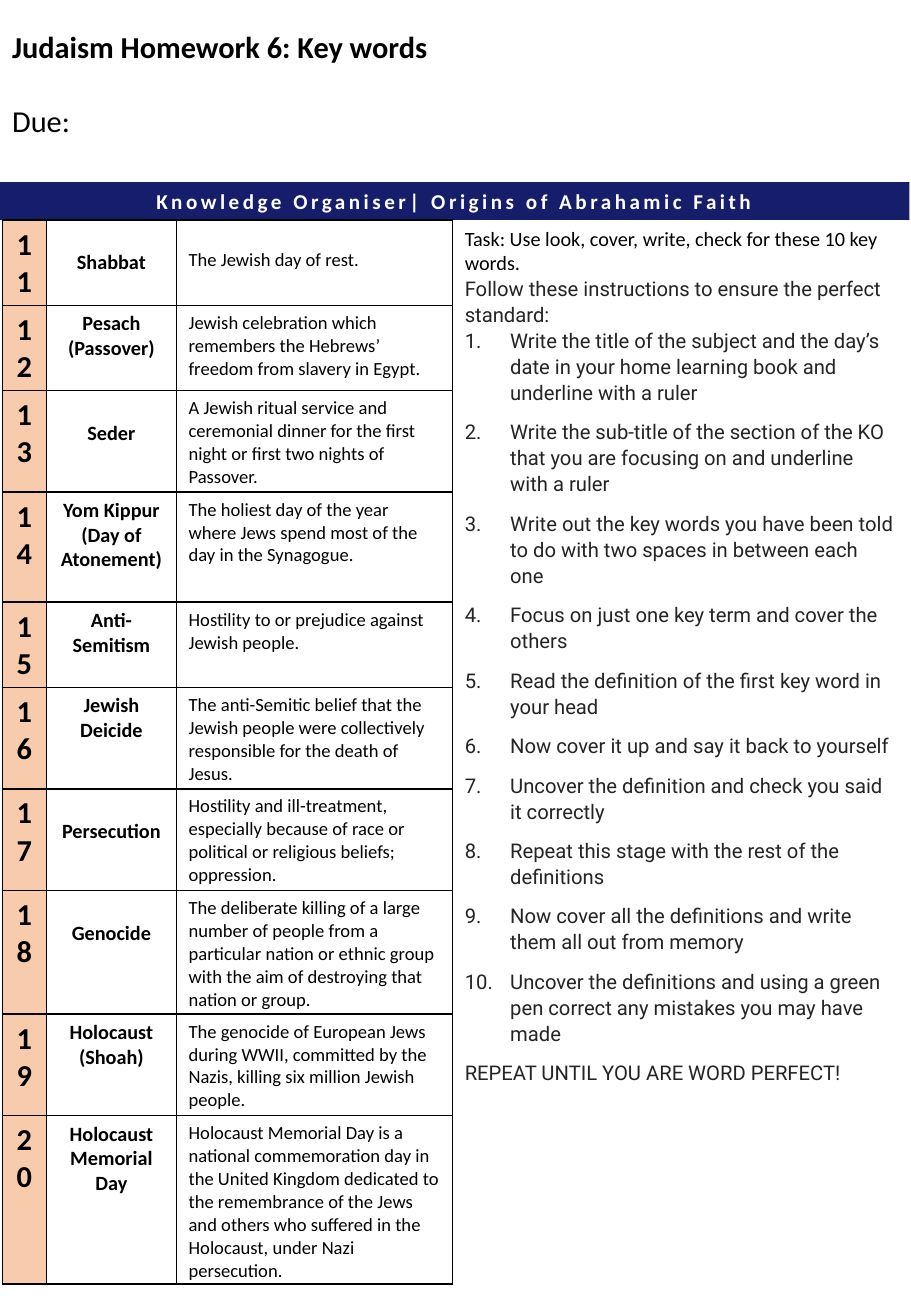
from lxml import etree
from pptx import Presentation
from pptx.dml.color import RGBColor
from pptx.enum.shapes import MSO_SHAPE
from pptx.enum.text import MSO_ANCHOR, MSO_AUTO_SIZE, PP_ALIGN
from pptx.oxml.ns import qn
from pptx.util import Cm, Pt

RECTANGLE = MSO_SHAPE.RECTANGLE
TOP, MIDDLE = MSO_ANCHOR.TOP, MSO_ANCHOR.MIDDLE
LEFT, CENTER = PP_ALIGN.LEFT, PP_ALIGN.CENTER
GROW = MSO_AUTO_SIZE.SHAPE_TO_FIT_TEXT
TITLE_ONLY = 5

NAVY, PEACH, WHITE, BLACK, CHARCOAL = "161E6B", "F8CBAD", "FFFFFF", "000000", "252424"

HEADING = dict(size=Pt(18), name="Calibri", bold=True)
DUE = dict(HEADING, bold=False)
BANNER = dict(size=Pt(12.5), name="Calibri", bold=True)
TERM = dict(size=Pt(12), name="Calibri", bold=True)
DEFINITION = dict(size=Pt(11), name="Calibri", bold=False)
TASK = dict(size=Pt(12), name="Calibri", bold=False)
INSTRUCTION = dict(TASK, name="Roboto")

FIRST_NUMBER = 11
COLUMN_WIDTHS = (0.92, 2.72, 5.77)
CELL_TOP = 0.13
LINE_DROP = {"term": 0.51, "definition": 0.47}

# Term, definition, row height in cm, cells that start one line lower
KEY_WORDS = [
    ("Shabbat", "The Jewish day of rest.", 1.78, ("term", "definition")),
    ("Pesach (Passover)",
     "Jewish celebration which remembers the Hebrews’ freedom from slavery in Egypt.",
     1.78, ()),
    ("Seder",
     "A Jewish ritual service and ceremonial dinner for the first night or first two "
     "nights of Passover.", 2.1, ("term",)),
    ("Yom Kippur (Day of Atonement)",
     "The holiest day of the year where Jews spend most of the day in the Synagogue.",
     2.3, ()),
    ("Anti-Semitism", "Hostility to or prejudice against Jewish people.", 1.78, ()),
    ("Jewish Deicide",
     "The anti-Semitic belief that the Jewish people were collectively responsible for "
     "the death of Jesus.", 2.12, ()),
    ("Persecution",
     "Hostility and ill-treatment, especially because of race or political or religious "
     "beliefs; oppression.", 2.12, ("term",)),
    ("Genocide",
     "The deliberate killing of a large number of people from a particular nation or "
     "ethnic group with the aim of destroying that nation or group.", 2.57, ("term",)),
    ("Holocaust\n(Shoah)",
     "The genocide of European Jews during WWII, committed by the Nazis, killing six "
     "million Jewish people.", 2.12, ()),
    ("Holocaust Memorial Day",
     "Holocaust Memorial Day is a national commemoration day in the United Kingdom "
     "dedicated to the remembrance of the Jews and others who suffered in the Holocaust, "
     "under Nazi persecution.", 3.5, ()),
]

STEPS = [
    "Write the title of the subject and the day’s date in your home learning book and "
    "underline with a ruler",
    "Write the sub-title of the section of the KO that you are focusing on and underline "
    "with a ruler",
    "Write out the key words you have been told to do with two spaces in between each one",
    "Focus on just one key term and cover the others",
    "Read the definition of the first key word in your head",
    "Now cover it up and say it back to yourself",
    "Uncover the definition and check you said it correctly",
    "Repeat this stage with the rest of the definitions",
    "Now cover all the definitions and write them all out from memory",
    "Uncover the definitions and using a green pen correct any mistakes you may have made",
]


def rgb(hex_color):
    return RGBColor.from_string(hex_color)


def set_attributes(target, values):
    for attribute, value in values.items():
        setattr(target, attribute, value)


def write(paragraph, text, font, color=BLACK, **layout):
    paragraph.text = text
    set_attributes(paragraph, layout)
    for run in paragraph.runs:
        set_attributes(run.font, font)
        run.font.color.rgb = rgb(color)


def number_paragraph(paragraph):
    properties = paragraph._p.get_or_add_pPr()
    properties.set("marL", str(Cm(0.95)))
    properties.set("indent", str(-Cm(0.95)))
    etree.SubElement(properties, qn("a:buFont"), typeface="+mj-lt")
    etree.SubElement(properties, qn("a:buAutoNum"), type="arabicPeriod")


def outline_cell(cell):
    """Draw a thin black line on all four sides."""
    properties = cell._tc.get_or_add_tcPr()
    for position, side in enumerate(("lnL", "lnR", "lnT", "lnB")):
        border = etree.Element(qn(f"a:{side}"), w=str(Pt(1)))
        fill = etree.SubElement(border, qn("a:solidFill"))
        etree.SubElement(fill, qn("a:srgbClr"), val=BLACK)
        properties.insert(position, border)


def add_heading(slide, left, top, width, height):
    title = slide.shapes.title
    set_attributes(title, dict(left=left, top=top, width=width, height=height))
    frame = title.text_frame
    set_attributes(frame, dict(word_wrap=True, auto_size=GROW, vertical_anchor=TOP))
    write(frame.paragraphs[0], "Judaism Homework 6: Key words", HEADING, alignment=LEFT)
    write(frame.add_paragraph(), "Due:", DUE, alignment=LEFT, space_before=Pt(22))


def add_banner(slide, left, top, width, height):
    banner = slide.shapes.add_shape(RECTANGLE, left, top, width, height)
    banner.shadow.inherit = False
    banner.fill.solid()
    banner.fill.fore_color.rgb = rgb(NAVY)
    banner.line.fill.background()
    banner.text_frame.vertical_anchor = MIDDLE
    caption = banner.text_frame.paragraphs[0]
    write(caption, "Knowledge Organiser| Origins of Abrahamic Faith", BANNER, WHITE,
          alignment=CENTER)
    caption.runs[0].font._element.set("spc", "210")


def add_key_words(slide, left, top, width, height):
    table = slide.shapes.add_table(len(KEY_WORDS), len(COLUMN_WIDTHS),
                                   left, top, width, height).table
    set_attributes(table, dict(first_row=False, horz_banding=False))
    for column, column_width in zip(table.columns, COLUMN_WIDTHS):
        column.width = Cm(column_width)
    for index, (term, definition, row_height, lowered) in enumerate(KEY_WORDS):
        row = table.rows[index]
        row.height = Cm(row_height)
        contents = (
            ("number", str(FIRST_NUMBER + index), HEADING, CENTER, PEACH),
            ("term", term, TERM, CENTER, WHITE),
            ("definition", definition, DEFINITION, LEFT, WHITE),
        )
        for cell, (role, text, font, alignment, background) in zip(row.cells, contents):
            drop = LINE_DROP[role] if role in lowered else 0
            set_attributes(cell, dict(margin_top=Cm(CELL_TOP + drop), vertical_anchor=TOP))
            cell.fill.solid()
            cell.fill.fore_color.rgb = rgb(background)
            outline_cell(cell)
            write(cell.text_frame.paragraphs[0], text, font, alignment=alignment)


def add_instructions(slide, left, top, width, height):
    frame = slide.shapes.add_textbox(left, top, width, height).text_frame
    set_attributes(frame, dict(word_wrap=True, auto_size=GROW))
    write(frame.paragraphs[0],
          "Task: Use look, cover, write, check for these 10 key words.", TASK)
    write(frame.add_paragraph(),
          "Follow these instructions to ensure the perfect standard:",
          INSTRUCTION, CHARCOAL, line_spacing=1.07)
    for step in STEPS:
        paragraph = frame.add_paragraph()
        write(paragraph, step, INSTRUCTION, CHARCOAL, line_spacing=1.07, space_after=Pt(8))
        number_paragraph(paragraph)
    write(frame.add_paragraph(), "REPEAT UNTIL YOU ARE WORD PERFECT!",
          INSTRUCTION, CHARCOAL, line_spacing=1.07)


def main():
    presentation = Presentation()
    set_attributes(presentation, dict(slide_width=Cm(19.05), slide_height=Cm(27.51)))
    slide = presentation.slides.add_slide(presentation.slide_layouts[TITLE_ONLY])
    add_heading(slide, Cm(0), Cm(0.46), Cm(15.52), Cm(2.57))
    add_banner(slide, Cm(-0.03), Cm(3.81), Cm(19.05), Cm(0.79))
    add_key_words(slide, Cm(0.05), Cm(4.6), Cm(sum(COLUMN_WIDTHS)),
                  Cm(sum(row_height for _, _, row_height, _ in KEY_WORDS)))
    add_instructions(slide, Cm(9.47), Cm(4.6), Cm(9.53), Cm(18.92))
    presentation.save("out.pptx")


if __name__ == "__main__":
    main()
